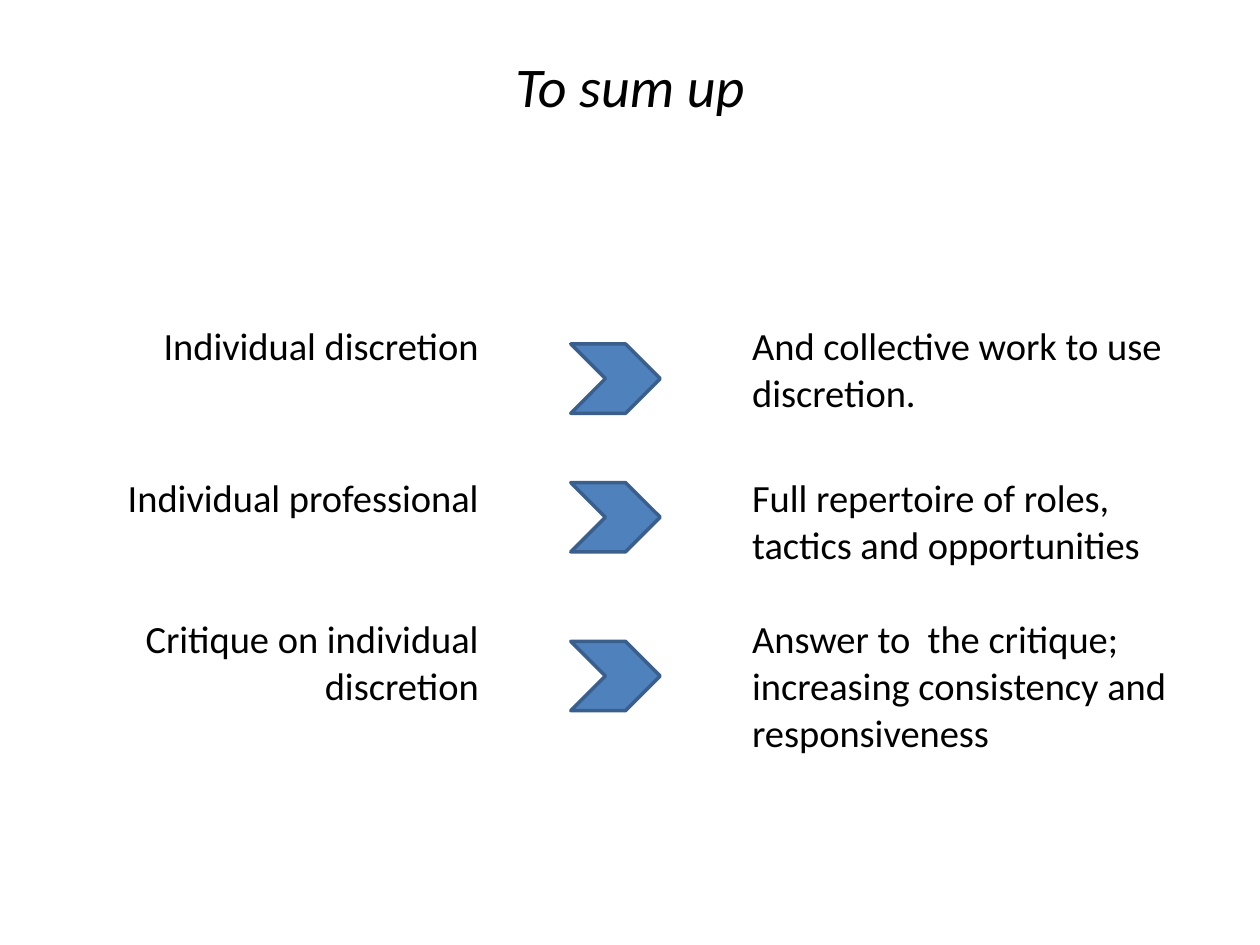
from pptx import Presentation
from pptx.dml.color import RGBColor
from pptx.enum.shapes import MSO_SHAPE
from pptx.enum.text import MSO_ANCHOR, PP_ALIGN
from pptx.util import Inches, Pt

CHEVRON = MSO_SHAPE.CHEVRON
MIDDLE = MSO_ANCHOR.MIDDLE
LEFT, CENTER, RIGHT = PP_ALIGN.LEFT, PP_ALIGN.CENTER, PP_ALIGN.RIGHT
COLORS = {"text": "000000", "chevron": "4F81BD", "outline": "3A5F8C"}
FONT = "Calibri"
LINE_HEIGHT = 26.8


def style_paragraph(para, size, align, italic=False):
    para.alignment = align
    for span in para.runs:
        span.font.name = FONT
        span.font.size = Pt(size)
        span.font.italic = italic
        span.font.color.rgb = RGBColor.from_string(COLORS["text"])


deck = Presentation()
deck.slide_width = Inches(10)
deck.slide_height = Inches(7.5)
page = deck.slides.add_slide(deck.slide_layouts[6])

title_box = page.shapes.add_textbox(Inches(0.5), Inches(0.05), Inches(9), Inches(1.25))
title_box.text_frame.word_wrap = True
title_box.text_frame.vertical_anchor = MIDDLE
title_box.text_frame.text = "To sum up"
style_paragraph(title_box.text_frame.paragraphs[0], 32, CENTER, italic=True)

column_widths = [3.62, 1.97, 3.86]
row_heights = [1.21, 2.33, 0.53]
table = page.shapes.add_table(
    3, 3, Inches(0.28), Inches(2.52), Inches(sum(column_widths)), Inches(sum(row_heights))
).table
table.first_row = False
table.horz_banding = False
for column, width in zip(table.columns, column_widths):
    column.width = Inches(width)
for row, height in zip(table.rows, row_heights):
    row.height = Inches(height)
    for cell in row.cells:
        cell.fill.background()

cell_texts = [
    (0, 0, RIGHT, 0, ["Individual discretion"]),
    (0, 2, LEFT, 0, ["And collective work to use discretion."]),
    (1, 0, RIGHT, 2, ["Individual professional", "Critique on individual discretion"]),
    (1, 2, LEFT, 1, [
        "Full repertoire of roles, tactics and opportunities",
        "Answer to  the critique; increasing consistency and responsiveness",
    ]),
]
for row_index, column_index, align, gap_lines, lines in cell_texts:
    frame = table.cell(row_index, column_index).text_frame
    frame.text = "\n".join(lines)
    for para in frame.paragraphs:
        style_paragraph(para, 22, align)
    for para in frame.paragraphs[1:]:
        para.space_before = Pt(gap_lines * LINE_HEIGHT)

for top in [2.73, 3.83, 5.09]:
    chevron = page.shapes.add_shape(CHEVRON, Inches(4.53), Inches(top), Inches(0.71), Inches(0.55))
    chevron.shadow.inherit = False
    chevron.fill.solid()
    chevron.fill.fore_color.rgb = RGBColor.from_string(COLORS["chevron"])
    chevron.line.color.rgb = RGBColor.from_string(COLORS["outline"])
    chevron.line.width = Pt(2)

deck.save("out.pptx")
